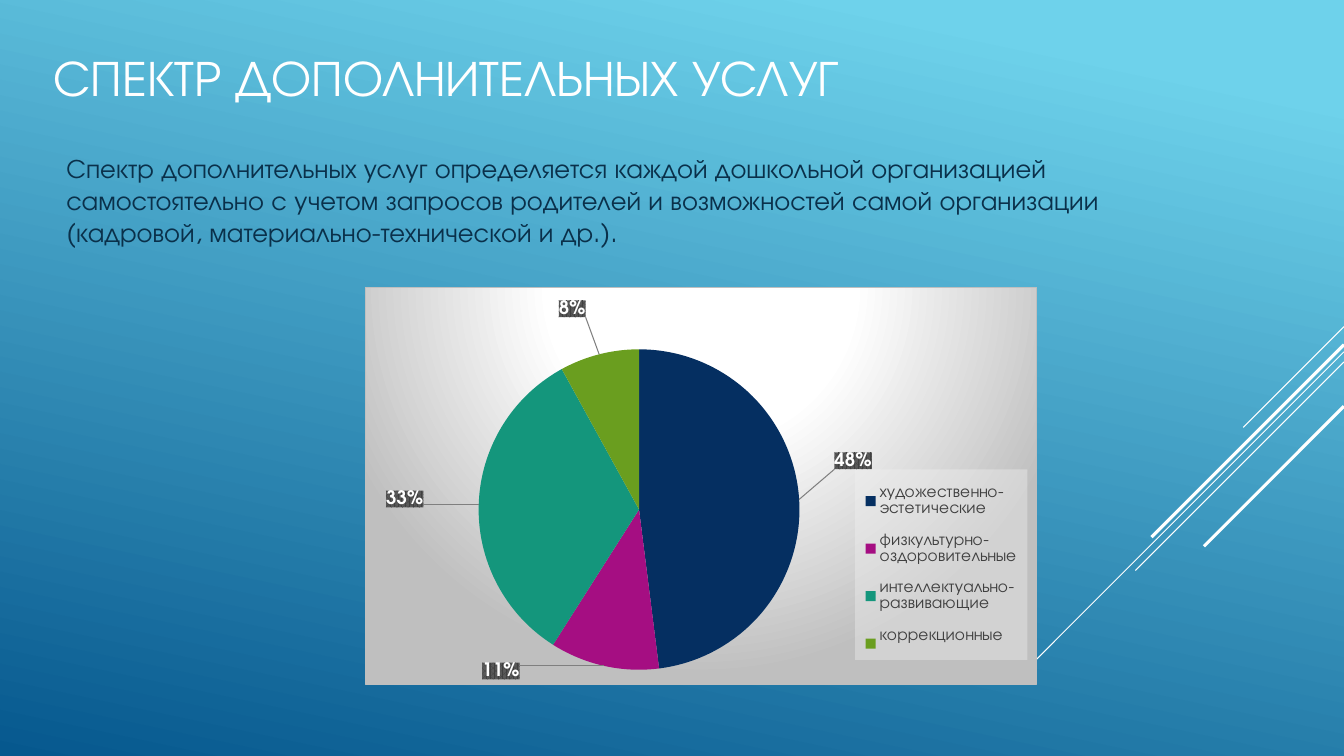
from lxml import etree
from pptx import Presentation
from pptx.chart.data import CategoryChartData
from pptx.dml.color import RGBColor
from pptx.enum.chart import XL_CHART_TYPE as ChartType, XL_LEGEND_POSITION as LegendPosition
from pptx.enum.shapes import MSO_CONNECTOR as Connector
from pptx.enum.text import MSO_ANCHOR as Anchor, PP_ALIGN as Align
from pptx.oxml import parse_xml
from pptx.oxml.ns import nsdecls, qn
from pptx.util import Pt

TITLE = "СПЕКТР ДОПОЛНИТЕЛЬНЫХ УСЛУГ"
INTRO = (
    "Спектр дополнительных услуг определяется каждой дошкольной организацией "
    "самостоятельно с учетом запросов родителей и возможностей самой организации "
    "(кадровой, материально-технической и др.)."
)
FONT = "TeX Gyre Adventor"
WHITE = RGBColor(0xFF, 0xFF, 0xFF)
INK = RGBColor(0x0A, 0x30, 0x4A)
GREY = RGBColor(0x40, 0x40, 0x40)
SKY = RGBColor(0x6E, 0xD2, 0xEB)
DEEP = RGBColor(0x06, 0x58, 0x8E)
NAVY = RGBColor(0x05, 0x2F, 0x61)
PURPLE = RGBColor(0xA5, 0x0E, 0x82)
TEAL = RGBColor(0x14, 0x96, 0x7C)
GREEN = RGBColor(0x6A, 0x9E, 0x1F)

SERVICES = [
    ("художественно-эстетические", 48, NAVY, (0.2, -0.11)),
    ("физкультурно-оздоровительные", 11, PURPLE, (-0.18, 0.21)),
    ("интеллектуально-развивающие", 33, TEAL, (-0.23, -0.02)),
    ("коррекционные", 8, GREEN, (-0.07, -0.31)),
]
PLOT_AREA = (0.108, 0.155, 0.599, 0.807)
LEGEND_AREA = (0.73, 0.457, 0.257, 0.48)
RAYS = [
    (233.3, 72, 0.75),
    (251.3, 235, 0.75),
    (258.5, 149, 0.75),
    (246.2, 137.5, 2.25),
    (290.2, 100, 2.25),
]
WIDTH, HEIGHT = 960, 540


def style(font, size, color, bold=False):
    font.name = FONT
    font.size = Pt(size)
    font.bold = bold
    font.color.rgb = color


def layout_xml(area, inner=False):
    target = '<c:layoutTarget val="inner"/>' if inner else ""
    modes = '<c:xMode val="edge"/><c:yMode val="edge"/>'
    sizes = "".join(f'<c:{key} val="{value}"/>' for key, value in zip("xywh", area))
    return parse_xml(
        f'<c:layout {nsdecls("c")}><c:manualLayout>{target}{modes}{sizes}</c:manualLayout></c:layout>'
    )


def place(parent, layout, before):
    for old in parent.findall(qn("c:layout")):
        parent.remove(old)
    parent.find(qn(before)).addprevious(layout)


def add_labels(series):
    box = (
        '<c:spPr><a:pattFill prst="pct75"><a:fgClr><a:srgbClr val="404040"/></a:fgClr>'
        '<a:bgClr><a:srgbClr val="595959"/></a:bgClr></a:pattFill><a:ln><a:noFill/></a:ln></c:spPr>'
        '<c:txPr><a:bodyPr/><a:p><a:pPr><a:defRPr sz="1330" b="1"><a:solidFill>'
        f'<a:srgbClr val="{WHITE}"/></a:solidFill><a:latin typeface="{FONT}"/></a:defRPr></a:pPr>'
        '<a:endParaRPr lang="ru-RU"/></a:p></c:txPr><c:dLblPos val="ctr"/>'
    )
    flags = {"LegendKey": 0, "Val": 0, "CatName": 0, "SerName": 0, "Percent": 1, "BubbleSize": 0}
    shown = box + "".join(f'<c:show{key} val="{value}"/>' for key, value in flags.items())
    points = "".join(
        f'<c:dLbl><c:idx val="{index}"/><c:layout><c:manualLayout><c:x val="{x}"/><c:y val="{y}"/>'
        f"</c:manualLayout></c:layout>{shown}</c:dLbl>"
        for index, (_, _, _, (x, y)) in enumerate(SERVICES)
    )
    leaders = (
        '<c:showLeaderLines val="1"/><c:leaderLines><c:spPr><a:ln w="9525"><a:solidFill>'
        '<a:srgbClr val="7F7F7F"/></a:solidFill></a:ln></c:spPr></c:leaderLines>'
    )
    labels = parse_xml(f'<c:dLbls {nsdecls("c", "a")}>{points}{shown}{leaders}</c:dLbls>')
    series.find(qn("c:cat")).addprevious(labels)


def add_pie(page):
    data = CategoryChartData()
    data.categories = [name for name, *_ in SERVICES]
    data.add_series("Series 1", [share for _, share, *_ in SERVICES])
    frame = page.shapes.add_chart(
        ChartType.PIE, Pt(261), Pt(205.2), Pt(479.5), Pt(284.4), data
    )
    chart = frame.chart
    chart.has_title = False
    style(chart.font, 10, WHITE)
    plot = chart.plots[0]
    plot.vary_by_categories = True
    series = plot.series[0]
    for index, (_, _, color, _) in enumerate(SERVICES):
        fill = series.points[index].format.fill
        fill.solid()
        fill.fore_color.rgb = color
    add_labels(series._element)

    chart.has_legend = True
    legend = chart.legend
    legend.position = LegendPosition.RIGHT
    legend.include_in_layout = False
    style(legend.font, 12, GREY)
    place(legend._element, layout_xml(LEGEND_AREA), "c:overlay")
    legend._element.find(qn("c:txPr")).addprevious(parse_xml(
        f'<c:spPr {nsdecls("c", "a")}><a:solidFill><a:srgbClr val="F2F2F2">'
        '<a:alpha val="39000"/></a:srgbClr></a:solidFill><a:ln><a:noFill/></a:ln></c:spPr>'
    ))

    space = chart._chartSpace
    place(space.find(".//" + qn("c:plotArea")), layout_xml(PLOT_AREA, True), "c:pieChart")
    stops = "".join(
        f'<a:gs pos="{position}000"><a:srgbClr val="{color}"/></a:gs>'
        for position, color in [(0, "FFFFFF"), (39, "FFFFFF"), (100, "BFBFBF")]
    )
    space.find(qn("c:txPr")).addprevious(parse_xml(
        f'<c:spPr {nsdecls("c", "a")}><a:gradFill><a:gsLst>{stops}</a:gsLst><a:path path="circle">'
        '<a:fillToRect l="50000" t="-80000" r="50000" b="180000"/></a:path></a:gradFill>'
        '<a:ln w="9525"><a:solidFill><a:srgbClr val="BFBFBF"/></a:solidFill></a:ln></c:spPr>'
    ))


def build():
    deck = Presentation()
    deck.slide_width, deck.slide_height = Pt(WIDTH), Pt(HEIGHT)
    page = deck.slides.add_slide(deck.slide_layouts[5])
    backdrop = page.background.fill
    backdrop.gradient()
    backdrop.gradient_angle = 258
    for stop, position, color in zip(backdrop.gradient_stops, (0.1, 1), (SKY, DEEP)):
        stop.position = position
        stop.color.rgb = color

    for top, reach, weight in RAYS:
        ray = page.shapes.add_connector(
            Connector.STRAIGHT, Pt(WIDTH), Pt(top), Pt(WIDTH - reach), Pt(top + reach)
        )
        ray.line.color.rgb = WHITE
        ray.line.width = Pt(weight)
        etree.SubElement(ray._element.spPr, qn("a:effectLst"))

    title = page.shapes.title
    title.left, title.top, title.width, title.height = Pt(31), Pt(13.7), Pt(672), Pt(81.4)
    title.text_frame.text = TITLE
    title.text_frame.vertical_anchor = Anchor.MIDDLE
    heading = title.text_frame.paragraphs[0]
    heading.alignment = Align.LEFT
    style(heading.font, 36, WHITE)

    add_pie(page)

    intro = page.shapes.add_textbox(Pt(40.3), Pt(105.1), Pt(831), Pt(76.3))
    intro.text_frame.word_wrap = True
    intro.text_frame.text = INTRO
    style(intro.text_frame.paragraphs[0].font, 19, INK)
    deck.save("out.pptx")


if __name__ == "__main__":
    build()
